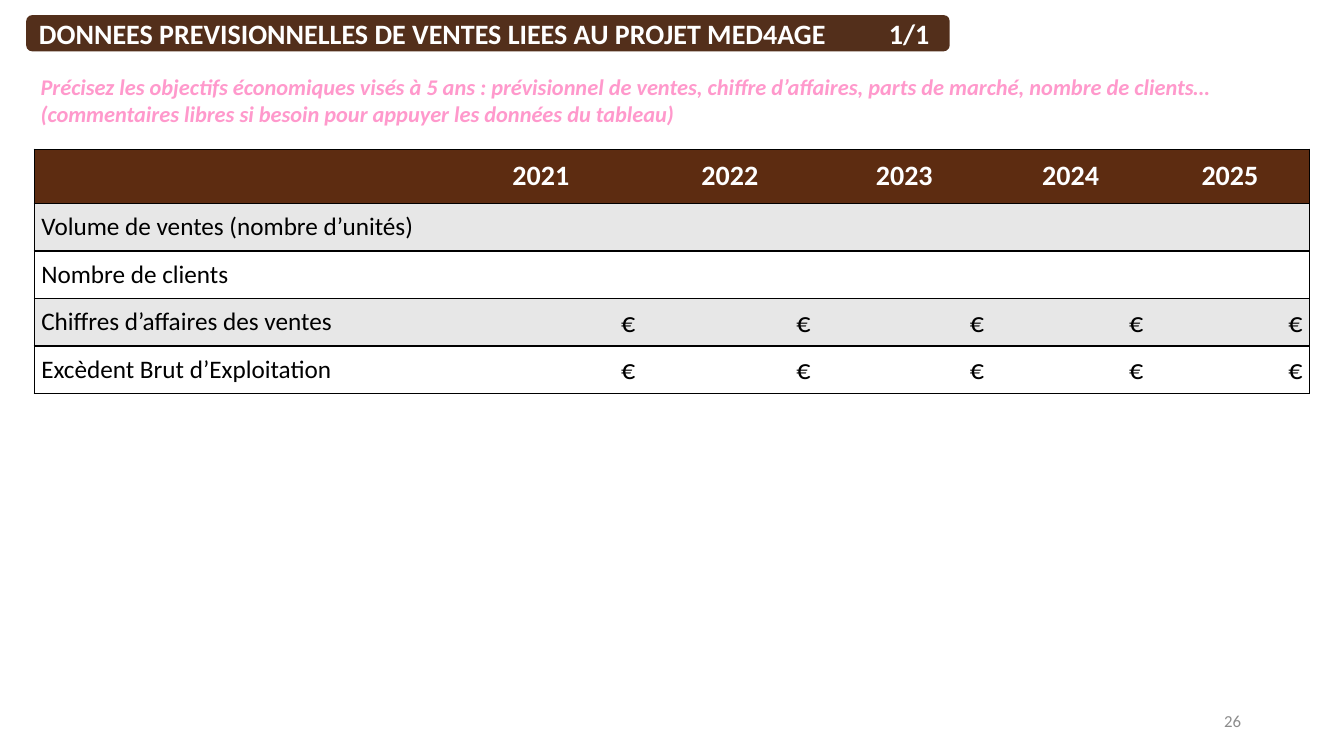
from dataclasses import dataclass

from lxml.etree import SubElement
from pptx import Presentation
from pptx.dml.color import RGBColor
from pptx.enum.shapes import MSO_SHAPE as Preset
from pptx.enum.text import MSO_ANCHOR as Anchor, PP_ALIGN as Align
from pptx.oxml.ns import qn
from pptx.util import Inches, Pt


@dataclass(frozen=True)
class Theme:
    font: str = "Calibri"
    title_fill: str = "532F1B"
    header_fill: str = "5D2C11"
    band: str = "E7E7E7"
    white: str = "FFFFFF"
    black: str = "000000"
    pink: str = "FF99CC"
    grey: str = "8C8C8C"
    large: int = 20
    body: int = 18
    hint: int = 16
    small: int = 12


THEME = Theme()
COLUMN_WIDTHS = [4.02, 2.01, 1.74, 1.72, 1.58, 1.58]
HEADER_HEIGHT = 0.54
ROW_HEIGHT = 0.47
FORECAST = [
    ["", "2021", "2022", "2023", "2024", "2025"],
    ["Volume de ventes (nombre d’unités)"] + [""] * 5,
    ["Nombre de clients"] + [""] * 5,
    ["Chiffres d’affaires des ventes"] + ["€"] * 5,
    ["Excèdent Brut d’Exploitation"] + ["€"] * 5,
]


def write_text(frame, text, *, size, color, align=Align.LEFT, bold=False, italic=False, tab=None):
    paragraph = frame.paragraphs[0]
    paragraph.text = text
    paragraph.alignment = align
    if tab:
        tabs = SubElement(paragraph._p.get_or_add_pPr(), qn("a:tabLst"))
        SubElement(tabs, qn("a:tab"), pos=str(Inches(tab)), algn="l")
    font = paragraph.font
    font.name = THEME.font
    font.size = Pt(size)
    font.bold = bold
    font.italic = italic
    font.color.rgb = RGBColor.from_string(color)


def set_up_frame(frame):
    frame.word_wrap = True
    frame.vertical_anchor = Anchor.MIDDLE
    frame.margin_left = frame.margin_right = Inches(0.11)
    frame.margin_top = frame.margin_bottom = Inches(0.05)


def add_banner(slide, left, top, width, height, text, *, fill=None, **text_format):
    shape = slide.shapes.add_shape(
        Preset.ROUNDED_RECTANGLE, Inches(left), Inches(top), Inches(width), Inches(height))
    shape.shadow.inherit = False
    shape.line.fill.background()
    if fill:
        shape.fill.solid()
        shape.fill.fore_color.rgb = RGBColor.from_string(fill)
    else:
        shape.fill.background()
    set_up_frame(shape.text_frame)
    write_text(shape.text_frame, text, **text_format)


def add_page_number(slide, number):
    box = slide.shapes.add_textbox(Inches(9.42), Inches(6.95), Inches(3), Inches(0.4))
    set_up_frame(box.text_frame)
    write_text(box.text_frame, number, size=THEME.small, color=THEME.grey, align=Align.RIGHT)


def set_borders(cell, visible):
    properties = cell._tc.get_or_add_tcPr()
    for side in "LRTB":
        line = SubElement(properties, qn(f"a:ln{side}"), w=str(Pt(1)))
        if side in visible:
            fill = SubElement(line, qn("a:solidFill"))
            SubElement(fill, qn("a:srgbClr"), val=THEME.black)
        else:
            SubElement(line, qn("a:noFill"))


def format_cell(cell, text, row, column):
    header = row == 0
    label = column == 0
    cell.vertical_anchor = Anchor.MIDDLE
    cell.margin_left = cell.margin_right = Inches(0.07)
    cell.margin_top = cell.margin_bottom = Inches(0.07)
    last = column == len(COLUMN_WIDTHS) - 1
    set_borders(cell, "TB" + ("L" if label else "") + ("R" if last else ""))
    fill = THEME.header_fill if header else THEME.band if row % 2 else THEME.white
    cell.fill.solid()
    cell.fill.fore_color.rgb = RGBColor.from_string(fill)
    write_text(
        cell.text_frame, text,
        size=THEME.large if text and not label else THEME.body,
        color=THEME.white if header else THEME.black,
        align=Align.CENTER if header else Align.LEFT if label else Align.RIGHT,
        bold=header)


def add_forecast_table(slide):
    heights = [HEADER_HEIGHT] + [ROW_HEIGHT] * (len(FORECAST) - 1)
    table = slide.shapes.add_table(
        len(heights), len(COLUMN_WIDTHS), Inches(0.34), Inches(1.48),
        Inches(sum(COLUMN_WIDTHS)), Inches(sum(heights))).table
    table.first_row = False
    table.horz_banding = False
    for column, width in zip(table.columns, COLUMN_WIDTHS):
        column.width = Inches(width)
    for row, height in zip(table.rows, heights):
        row.height = Inches(height)
    for row, values in enumerate(FORECAST):
        for column, text in enumerate(values):
            format_cell(table.cell(row, column), text, row, column)


def main():
    presentation = Presentation()
    presentation.slide_width = Inches(13.33)
    presentation.slide_height = Inches(7.5)
    slide = presentation.slides.add_slide(presentation.slide_layouts[6])
    add_page_number(slide, "26")
    add_forecast_table(slide)
    add_banner(
        slide, 0.26, 0.15, 9.16, 0.36,
        "DONNEES PREVISIONNELLES DE VENTES LIEES AU PROJET MED4AGE\t1/1",
        fill=THEME.title_fill, size=THEME.large, color=THEME.white, bold=True, tab=8.43)
    add_banner(
        slide, 0.26, 0.65, 12.17, 0.68,
        "Précisez les objectifs économiques visés à 5 ans : prévisionnel de ventes, "
        "chiffre d’affaires, parts de marché, nombre de clients… "
        "(commentaires libres si besoin pour appuyer les données du tableau)",
        size=THEME.hint, color=THEME.pink, bold=True, italic=True)
    presentation.save("out.pptx")


if __name__ == "__main__":
    main()
